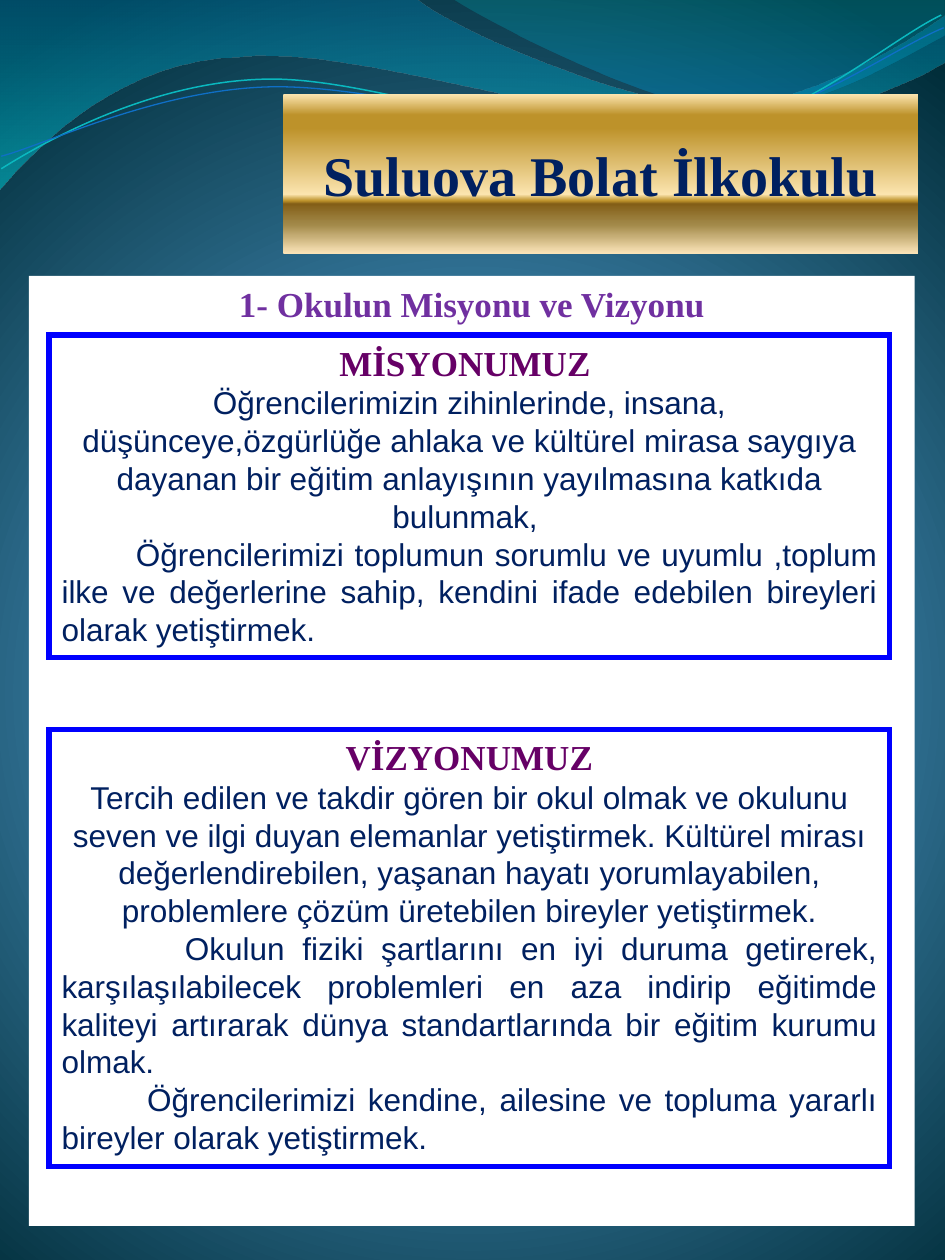
from math import cos, radians, sin

from lxml.etree import SubElement
from pptx import Presentation
from pptx.dml.color import RGBColor
from pptx.enum.shapes import MSO_SHAPE
from pptx.enum.text import MSO_ANCHOR, MSO_AUTO_SIZE, PP_ALIGN
from pptx.oxml.ns import qn
from pptx.util import Inches, Pt

WHITE = RGBColor(0xFF, 0xFF, 0xFF)
NAVY = RGBColor(0x00, 0x20, 0x60)
PURPLE = RGBColor(0x70, 0x30, 0xA0)
PLUM = RGBColor(0x66, 0x00, 0x66)
BLUE = RGBColor(0x00, 0x00, 0xFF)
TEAL_LINE = RGBColor(0x0A, 0xB8, 0xBF)
BLUE_LINE = RGBColor(0x0F, 0x6F, 0xC6)
SKY = RGBColor(0x4A, 0xA0, 0xD6)
SEA = RGBColor(0x4C, 0x98, 0xC7)
DEEP = RGBColor(0x00, 0x2C, 0x38)
WAVE_BLUE = RGBColor(0x00, 0x74, 0xA1)
WAVE_CYAN = RGBColor(0x00, 0xC6, 0xCF)
WAVE_TEAL = RGBColor(0x00, 0xA1, 0xA9)
WAVE_AZURE = RGBColor(0x00, 0x8B, 0xBF)
GOLD = RGBColor(0xBD, 0x92, 0x2A)
PALE_GOLD = RGBColor(0xFB, 0xE4, 0xAE)
DARK_GOLD = RGBColor(0x83, 0x5E, 0x17)
DULL_GOLD = RGBColor(0xA2, 0x89, 0x49)
END_GOLD = RGBColor(0xFA, 0xE3, 0xB7)

SERIF = "Times New Roman"
SANS = "Arial"
TILT = 357.3

BACKGROUND = [(0, SKY, 100), (25, SEA, 100), (100, DEEP, 100)]
GOLD_BAND = [(0, PALE_GOLD, 100), (13, GOLD, 100), (21, GOLD, 100),
             (63, PALE_GOLD, 100), (67, GOLD, 100), (69, DARK_GOLD, 100),
             (82, DULL_GOLD, 100), (100, END_GOLD, 100)]

LARGE_WAVE = [(0, -0.01), (3.3, -0.01), (3.57, 0.22, 4.98, 0.84, 5.69, 0.84),
              (6.4, 0.84, 7.19, 0.34, 7.5, 0.12), (7.51, 0.48),
              (7.38, 0.58, 6.52, 1.01, 5.59, 1.01),
              (4.66, 1, 2.86, 0.37, 1.93, 0.45),
              (0.97, 0.47, 0.34, 1.11, -0.01, 1.51), (0, -0.01)]
SMALL_WAVE = [(3.59, -0.01), (3.82, 0.15, 5.11, 0.82, 5.77, 0.87),
              (6.42, 0.92, 7.21, 0.43, 7.5, 0.28), (7.5, 0), (3.59, -0.01)]
TEAL_CURVE = [(0.01, 1.34), (0.36, 1.12, 1.18, 0.66, 2.07, 0.63),
              (2.96, 0.59, 4.45, 1.21, 5.35, 1.12),
              (6.26, 1.04, 7.03, 0.33, 7.47, 0.12)]
BLUE_CURVE = [(0.01, 1.24), (0.36, 1.15, 1.22, 0.72, 2.12, 0.69),
              (3.02, 0.66, 4.49, 1.14, 5.38, 1.06),
              (6.28, 0.99, 7.05, 0.4, 7.49, 0.22)]

MISSION = [
    ("Öğrencilerimizin zihinlerinde, insana, düşünceye,özgürlüğe ahlaka ve "
     "kültürel mirasa saygıya dayanan bir eğitim anlayışının yayılmasına "
     "katkıda bulunmak, ", 0),
    ("Öğrencilerimizi toplumun sorumlu ve uyumlu ,toplum ilke ve değerlerine "
     "sahip, kendini ifade edebilen bireyleri olarak yetiştirmek.", 0.59),
]
VISION = [
    ("Tercih edilen ve takdir gören bir okul olmak ve okulunu seven ve ilgi "
     "duyan elemanlar yetiştirmek. Kültürel mirası değerlendirebilen, yaşanan "
     "hayatı yorumlayabilen, problemlere çözüm üretebilen bireyler "
     "yetiştirmek.", 0),
    ("Okulun fiziki şartlarını en iyi duruma getirerek, karşılaşılabilecek "
     "problemleri en aza indirip eğitimde kaliteyi artırarak dünya "
     "standartlarında bir eğitim kurumu olmak.", 0.98),
    ("Öğrencilerimizi kendine, ailesine ve topluma yararlı bireyler olarak "
     "yetiştirmek.", 0.68),
]


def set_gradient(fill, element, stops, center=None):
    fill.gradient()
    grad = element.find(".//" + qn("a:gradFill"))
    for child in list(grad):
        grad.remove(child)
    stop_list = SubElement(grad, qn("a:gsLst"))
    for position, color, opacity in stops:
        gs = SubElement(stop_list, qn("a:gs"), pos=str(position * 1000))
        clr = SubElement(gs, qn("a:srgbClr"), val=str(color))
        if opacity < 100:
            SubElement(clr, qn("a:alpha"), val=str(opacity * 1000))
    if center:
        circle = SubElement(grad, qn("a:path"), path="circle")
        sides = {side: str(value * 1000) for side, value in zip("ltrb", center)}
        SubElement(circle, qn("a:fillToRect"), **sides)
    else:
        SubElement(grad, qn("a:lin"), ang="5400000", scaled="0")


def add_outline(s, box, segments, rotation=0, close=False):
    left, top, width, height = box
    right, bottom = left + width, top + height
    builder = s.shapes.build_freeform(Inches(left), Inches(top))
    builder.add_line_segments([(Inches(right), Inches(top)),
                               (Inches(right), Inches(bottom))], close=False)
    sp = builder.convert_to_shape()
    sp.shadow.inherit = False
    sp.rotation = rotation

    outline = sp._element.find(".//" + qn("a:pathLst"))[0]
    for child in list(outline):
        outline.remove(child)
    turn = radians(-rotation)
    for i, segment in enumerate(segments):
        tag = "a:cubicBezTo" if len(segment) == 6 else "a:lnTo" if i else "a:moveTo"
        step = SubElement(outline, qn(tag))
        for x, y in zip(segment[::2], segment[1::2]):
            dx, dy = x - left - width / 2, y - top - height / 2
            px = width / 2 + dx * cos(turn) - dy * sin(turn)
            py = height / 2 + dx * sin(turn) + dy * cos(turn)
            SubElement(step, qn("a:pt"), x=str(Inches(px)), y=str(Inches(py)))
    if close:
        SubElement(outline, qn("a:close"))
    return sp


def add_wave(s, box, segments, stops):
    sp = add_outline(s, box, segments, close=True)
    set_gradient(sp.fill, sp._element, stops)
    sp.line.fill.background()


def add_curve(s, box, segments, color, width):
    sp = add_outline(s, box, segments, TILT)
    sp.fill.background()
    sp.line.color.rgb = color
    sp.line.width = Pt(width)


def add_panel(s, left, top, width, height, anchor=MSO_ANCHOR.TOP):
    sp = s.shapes.add_shape(MSO_SHAPE.RECTANGLE, Inches(left), Inches(top),
                            Inches(width), Inches(height))
    sp.shadow.inherit = False
    sp.fill.solid()
    sp.fill.fore_color.rgb = WHITE
    sp.line.fill.background()
    sp.text_frame.word_wrap = True
    sp.text_frame.vertical_anchor = anchor
    return sp


def write(p, text, font, size, color, bold=False, align=PP_ALIGN.CENTER):
    p.text = text
    p.alignment = align
    for r in p.runs:
        r.font.name = font
        r.font.size = Pt(size)
        r.font.bold = bold
        r.font.color.rgb = color


def add_statement(s, top, height, heading, paragraphs):
    sp = add_panel(s, 0.39, top, 6.67, height)
    sp.line.color.rgb = BLUE
    sp.line.width = Pt(3)
    SubElement(sp._element.spPr.find(qn("a:ln")), qn("a:miter"), lim="800000")
    tf = sp.text_frame
    tf.auto_size = MSO_AUTO_SIZE.SHAPE_TO_FIT_TEXT
    write(tf.paragraphs[0], heading, SERIF, 20, PLUM, True)
    for text, indent in paragraphs:
        p = tf.add_paragraph()
        align = PP_ALIGN.JUSTIFY if indent else PP_ALIGN.CENTER
        write(p, text, SANS, 18, NAVY, align=align)
        if indent:
            p._p.get_or_add_pPr().set("indent", str(Inches(indent)))


def main():
    prs = Presentation()
    prs.slide_width, prs.slide_height = Inches(7.5), Inches(10)
    s = prs.slides.add_slide(prs.slide_layouts[6])
    set_gradient(s.background.fill, s._element, BACKGROUND, (10, 110, 10, 100))

    add_wave(s, (-0.01, -0.01, 7.52, 1.52), LARGE_WAVE,
             [(0, WAVE_BLUE, 45), (100, WAVE_CYAN, 55)])
    add_wave(s, (3.59, -0.01, 3.91, 0.93), SMALL_WAVE,
             [(0, WAVE_TEAL, 30), (80, WAVE_AZURE, 45)])
    add_curve(s, (-0.02, 0.3, 7.52, 0.95), TEAL_CURVE, TEAL_LINE, 0.85)
    add_curve(s, (-0.01, 0.4, 7.53, 0.77), BLUE_CURVE, BLUE_LINE, 0.75)

    body = add_panel(s, 0.23, 2.19, 7.03, 7.54)
    write(body.text_frame.paragraphs[0], "1- Okulun Misyonu ve Vizyonu",
          SERIF, 20, PURPLE, True)
    add_statement(s, 2.66, 2.56, "MİSYONUMUZ ", MISSION)
    add_statement(s, 5.79, 3.47, "VİZYONUMUZ", VISION)

    title = add_panel(s, 2.25, 0.75, 5.04, 1.26, MSO_ANCHOR.MIDDLE)
    set_gradient(title.fill, title._element, GOLD_BAND)
    write(title.text_frame.paragraphs[0], "Suluova Bolat İlkokulu",
          SERIF, 32, NAVY, True)

    prs.save("out.pptx")


if __name__ == "__main__":
    main()
